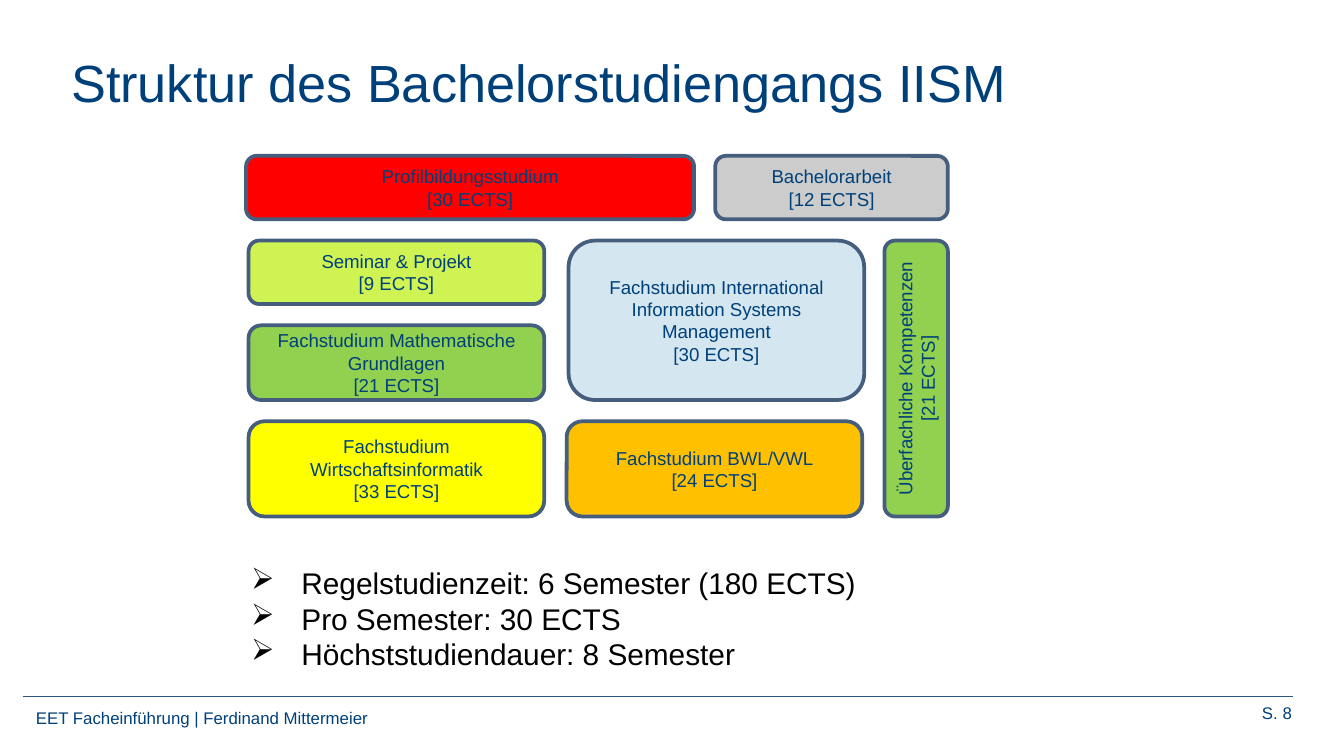
import pptx
import pptx.util
import pptx.dml.color
import pptx.enum.shapes
import pptx.enum.text
import pptx.oxml
import pptx.oxml.ns

Pt = pptx.util.Pt
ALIGN = pptx.enum.text.PP_ALIGN
ANCHOR = pptx.enum.text.MSO_ANCHOR

# Content
TITLE = "Struktur des Bachelorstudiengangs IISM"
FOOTER = "EET Facheinführung | Ferdinand Mittermeier"
PAGE_NUMBER = "S. 8"
FACTS = [
    "Regelstudienzeit: 6 Semester (180 ECTS)",
    "Pro Semester: 30 ECTS",
    "Höchststudiendauer: 8 Semester",
]
COLORS = {
    "text": "00407A", "facts": "000000", "rule": "2C5884", "outline": "455E7E",
    "yellow": "FFFF00", "orange": "FFC000", "green": "92D050", "lime": "CFF353",
    "sky": "D4E6F0", "red": "FF0000", "grey": "CCCCCC",
}

# Row heights from the top down, and the grid of the module blocks
ROW_HEIGHTS = [34, 34, 40, 51]
GRID_TOP, GAP = 83.5, 11.4
LEFT, WIDTH = 133.2, 158.4
MIDDLE = LEFT + WIDTH + 12
SIDE, SIDE_WIDTH = 473.8, 34
RIGHT = SIDE + SIDE_WIDTH

# Name, ECTS, fill, left, width, first row, last row, upright
MODULES = [
    ("Fachstudium Wirtschaftsinformatik", 33, "yellow", LEFT, WIDTH, 3, 3, False),
    ("Fachstudium BWL/VWL", 24, "orange", MIDDLE, WIDTH, 3, 3, False),
    ("Fachstudium Mathematische Grundlagen", 21, "green", LEFT, WIDTH, 2, 2, False),
    ("Seminar & Projekt", 9, "lime", LEFT, WIDTH, 1, 1, False),
    ("Fachstudium International Information Systems Management", 30, "sky",
     MIDDLE + 1, WIDTH, 1, 2, False),
    ("Überfachliche Kompetenzen", 21, "green", SIDE, SIDE_WIDTH, 1, 3, True),
    ("Profilbildungsstudium", 30, "red", LEFT - 1.4, 240, 0, 0, False),
    ("Bachelorarbeit", 12, "grey", RIGHT - 124.6, 124.6, 0, 0, False),
]


def rgb(name):
    return pptx.dml.color.RGBColor.from_string(COLORS[name])


def write(box, lines, size, color="text", align=ALIGN.LEFT, anchor=ANCHOR.TOP, bullet=None):
    frame = box.text_frame
    frame.word_wrap = True
    frame.auto_size = pptx.enum.text.MSO_AUTO_SIZE.NONE
    frame.vertical_anchor = anchor
    for index, line in enumerate(lines):
        para = frame.paragraphs[0] if index == 0 else frame.add_paragraph()
        para.alignment = align
        if bullet:
            properties = para._p.get_or_add_pPr()
            properties.set("marL", str(Pt(27)))
            properties.set("indent", str(-Pt(27)))
            mark = pptx.oxml.parse_xml(
                f'<a:buChar {pptx.oxml.ns.nsdecls("a")} char="{bullet}"/>')
            properties.append(mark)
        span = para.add_run()
        span.text = line
        span.font.name = "Arial"
        span.font.size = Pt(size)
        span.font.color.rgb = rgb(color)


def add_text(page, left, top, width, height, lines, size, **style):
    box = page.shapes.add_textbox(Pt(left), Pt(top), Pt(width), Pt(height))
    write(box, lines, size, **style)


def add_module(page, name, ects, fill, left, width, first, last, upright):
    top = GRID_TOP + sum(ROW_HEIGHTS[:first]) + first * GAP
    height = sum(ROW_HEIGHTS[first:last + 1]) + (last - first) * GAP
    if upright:  # swap the sides around the same centre
        left, top = left + (width - height) / 2, top + (height - width) / 2
        width, height = height, width
    block = page.shapes.add_shape(
        pptx.enum.shapes.MSO_SHAPE.ROUNDED_RECTANGLE,
        Pt(left), Pt(top), Pt(width), Pt(height))
    block.rotation = 270 if upright else 0
    block.shadow.inherit = False
    block.fill.solid()
    block.fill.fore_color.rgb = rgb(fill)
    block.line.color.rgb = rgb("outline")
    block.line.width = Pt(2)
    write(block, [name, f"[{ects} ECTS]"], 10, align=ALIGN.CENTER, anchor=ANCHOR.MIDDLE)


def main():
    deck = pptx.Presentation()
    deck.slide_width, deck.slide_height = Pt(720), Pt(405)
    page = deck.slides.add_slide(deck.slide_layouts[5])

    # Footer with rule and page number
    add_text(page, 12.2, 375.8, 529, 13.7, [FOOTER], 9)
    rule = page.shapes.add_connector(
        pptx.enum.shapes.MSO_CONNECTOR.STRAIGHT, Pt(12.2), Pt(373), Pt(692.6), Pt(373))
    rule.line.color.rgb = rgb("rule")
    rule.line.width = Pt(0.75)
    rule._element.spPr.append(
        pptx.oxml.parse_xml(f'<a:effectLst {pptx.oxml.ns.nsdecls("a")}/>'))
    add_text(page, 615, 373, 84.2, 18, [PAGE_NUMBER], 9, align=ALIGN.RIGHT)

    # Title
    title = page.shapes.title
    title.left, title.top, title.width, title.height = Pt(31), Pt(21), Pt(578), Pt(45.4)
    write(title, [TITLE], 28, anchor=ANCHOR.MIDDLE)

    # Key facts
    add_text(page, 127.4, 298.8, 538.6, 65.5, FACTS, 16, color="facts", bullet="➢")

    # Module blocks
    for module in MODULES:
        add_module(page, *module)

    deck.save("out.pptx")


if __name__ == "__main__":
    main()
